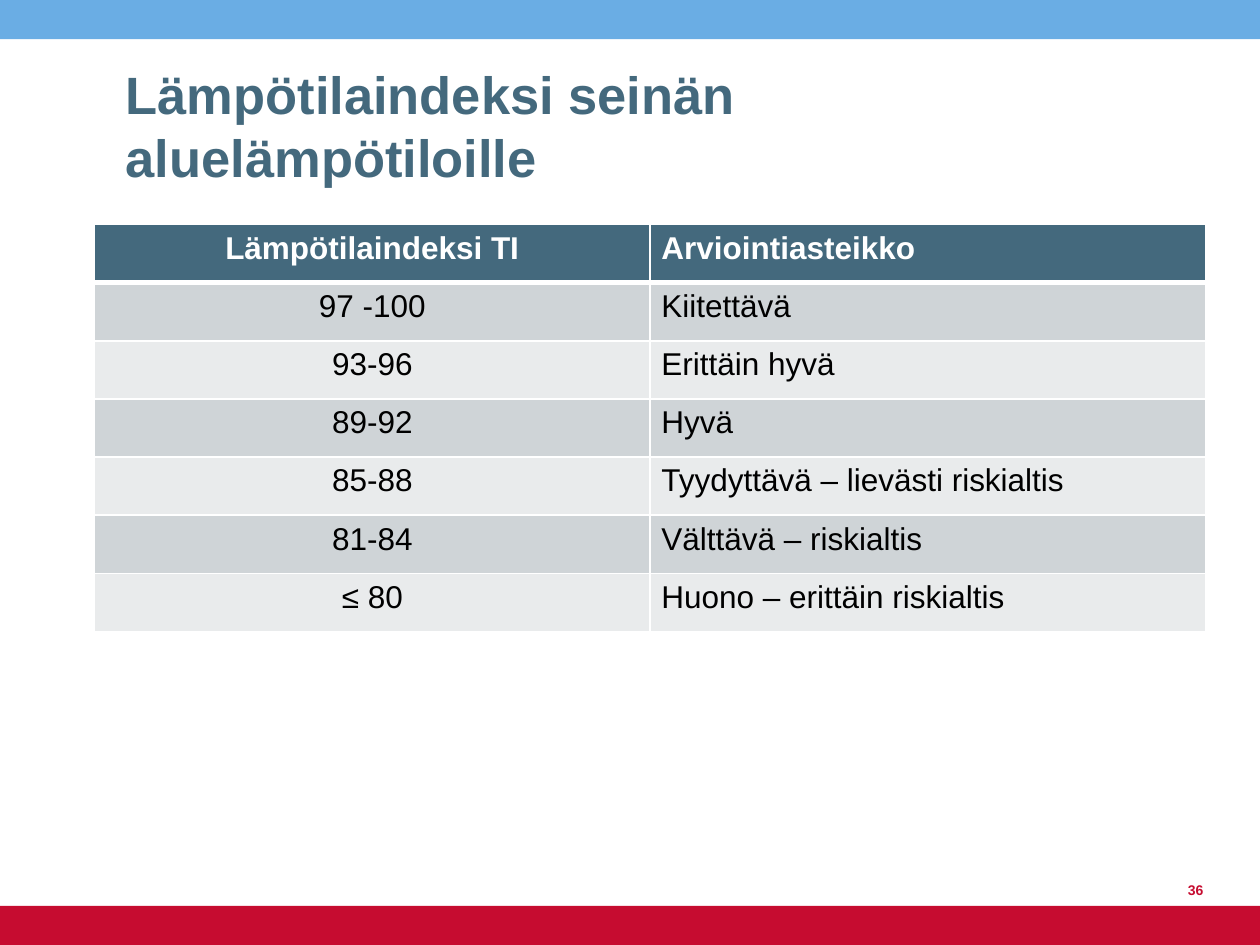
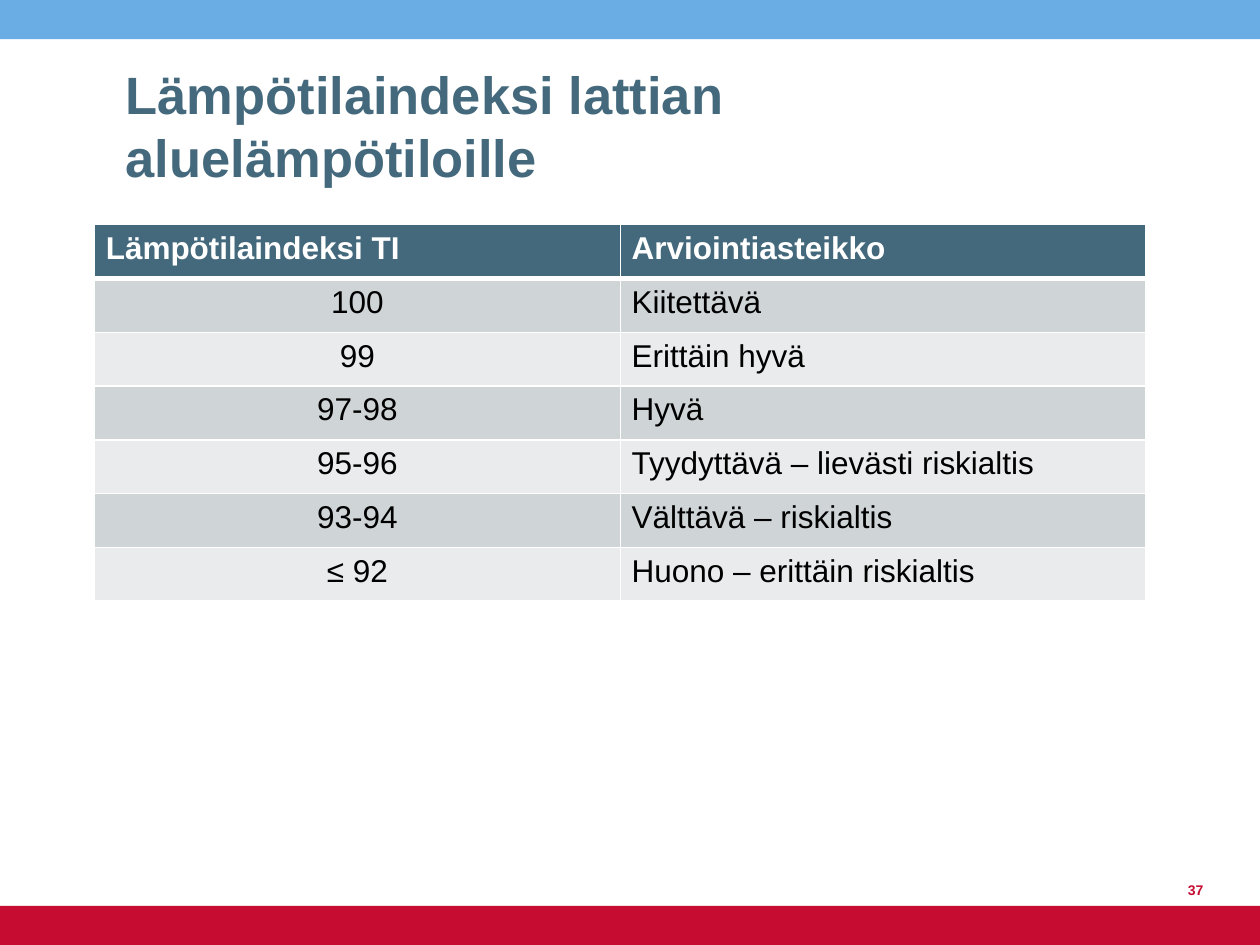
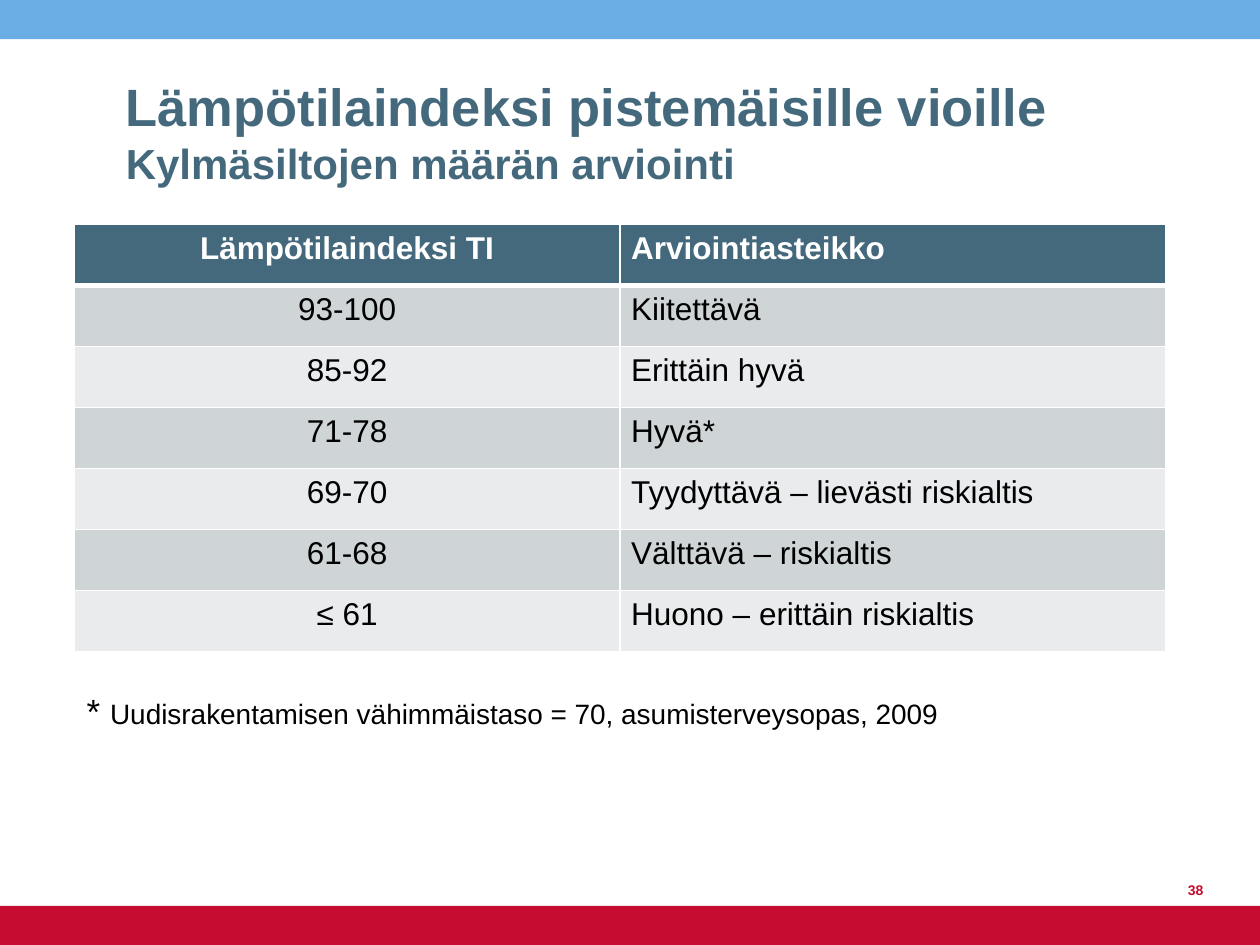
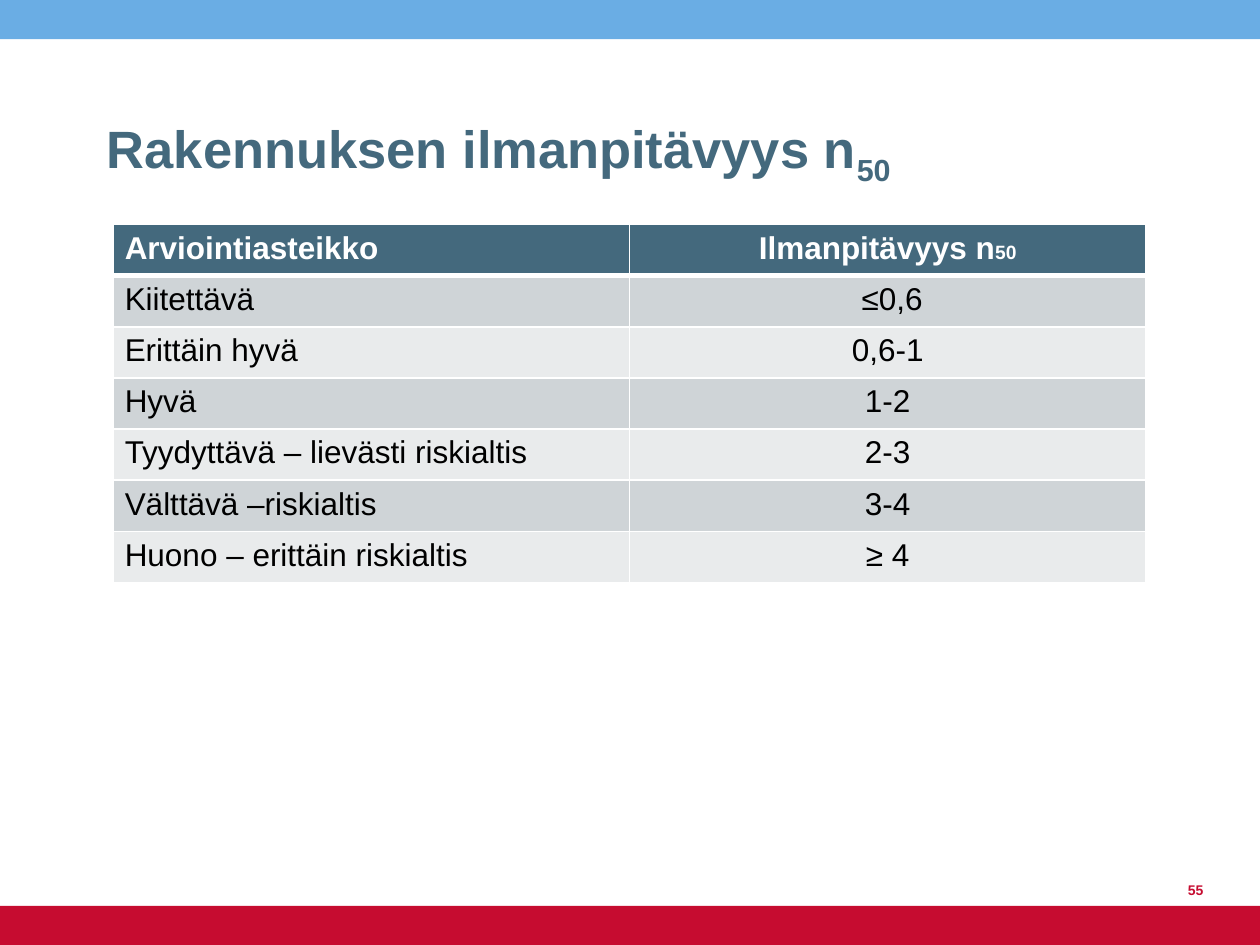
import pptx
import pptx.dml.color
import pptx.enum.shapes
import pptx.enum.text
import pptx.oxml.ns
import pptx.util
from lxml import etree

Pt = pptx.util.Pt
LEFT, CENTER, RIGHT = (getattr(pptx.enum.text.PP_ALIGN, side) for side in ("LEFT", "CENTER", "RIGHT"))

COLORS = {
    "sky": "6AADE4",
    "red": "C60C30",
    "slate": "44697D",
    "row_dark": "CFD4D7",
    "row_light": "E9EBEC",
    "white": "FFFFFF",
    "black": "000000",
}
WIDTH, HEIGHT, BAND = 720, 540, 22.4
TABLE_TOP = 128.4
RATINGS = ["Kiitettävä", "Erittäin hyvä", "Hyvä", "Tyydyttävä – lievästi riskialtis",
           "Välttävä – riskialtis", "Huono – erittäin riskialtis"]


def color(name):
    return pptx.dml.color.RGBColor.from_string(COLORS[name])


class Deck:
    """Holds the shared style and the current slide."""

    font = "Arial"

    def __init__(self):
        self.prs = pptx.Presentation()
        self.prs.slide_width, self.prs.slide_height = Pt(WIDTH), Pt(HEIGHT)
        self.slide = None

    def start(self, number):
        self.slide = self.prs.slides.add_slide(self.prs.slide_layouts[6])
        self.band(0, "sky")
        self.band(HEIGHT - BAND, "red")
        self.text(655.2, 488.2, 39.6, 28.8, [(number, {})], size=8, tint="red",
                  bold=True, align=RIGHT, anchor="BOTTOM")

    def band(self, top, tint):
        bar = self.slide.shapes.add_shape(pptx.enum.shapes.MSO_SHAPE.RECTANGLE,
                                          0, Pt(top), Pt(WIDTH), Pt(BAND))
        bar.shadow.inherit = False
        bar.fill.solid()
        bar.fill.fore_color.rgb = color(tint)
        bar.line.fill.background()

    def fill_paragraph(self, paragraph, runs, size, tint, bold=False, align=LEFT):
        """Each run is (text, changes); a line feed stands for a line break."""
        paragraph.alignment = align
        for text, changes in runs:
            if text == "\n":
                paragraph.add_line_break()
                continue
            run = paragraph.add_run()
            run.text = text
            font_values = {"name": self.font, "size": Pt(changes.get("size", size)), "bold": bold}
            for key, value in font_values.items():
                setattr(run.font, key, value)
            run.font.color.rgb = color(tint)
            if "baseline" in changes:
                run._r.get_or_add_rPr().set("baseline", str(changes["baseline"] * 1000))

    def text(self, left, top, width, height, runs, anchor="TOP", **style):
        frame = self.slide.shapes.add_textbox(Pt(left), Pt(top), Pt(width), Pt(height)).text_frame
        frame.word_wrap = True
        frame.vertical_anchor = getattr(pptx.enum.text.MSO_ANCHOR, anchor)
        self.fill_paragraph(frame.paragraphs[0], runs, **style)

    def title(self, runs, left=64.8):
        self.text(left, 25.9, 589.7, 85, runs, anchor="BOTTOM", size=30, tint="slate", bold=True)

    def borders(self, cell, widths):
        properties = cell._tc.get_or_add_tcPr()
        for side, width in widths.items():
            line = etree.SubElement(properties, pptx.oxml.ns.qn(f"a:ln{side}"), w=str(Pt(width)))
            fill = etree.SubElement(line, pptx.oxml.ns.qn("a:solidFill"))
            etree.SubElement(fill, pptx.oxml.ns.qn("a:srgbClr"), val=COLORS["white"])

    def table(self, left, width, row_height, rows, aligns, header_aligns=None):
        """Header row on slate, then alternating grey rows; a cell is a list of runs or a string."""
        frame = self.slide.shapes.add_table(len(rows), len(aligns), Pt(left), Pt(TABLE_TOP),
                                            Pt(width), Pt(row_height * len(rows)))
        grid = frame.table
        grid.horz_banding = grid.first_row = False
        for column in grid.columns:
            column.width = Pt(width / len(aligns))
        for i, row in enumerate(rows):
            grid.rows[i].height = Pt(row_height)
            header = i == 0
            tint = "slate" if header else ("row_light", "row_dark")[i % 2]
            row_aligns = header_aligns if header and header_aligns else aligns
            for j, content in enumerate(row):
                cell = grid.cell(i, j)
                cell.margin_left = cell.margin_right = Pt(6.5)
                cell.margin_top = cell.margin_bottom = Pt(3.6)
                self.borders(cell, {"L": 1, "R": 1, "T": 3 if i == 1 else 1, "B": 3 if header else 1})
                cell.fill.solid()
                cell.fill.fore_color.rgb = color(tint)
                runs = [(content, {})] if isinstance(content, str) else content
                self.fill_paragraph(cell.text_frame.paragraphs[0], runs, size=18, bold=header,
                                    tint="white" if header else "black", align=row_aligns[j])


def index_rows(indexes, ratings):
    return [("Lämpötilaindeksi TI", "Arviointiasteikko"), *zip(indexes, ratings)]


def main():
    deck = Deck()

    # Wall area temperatures
    deck.start("36")
    deck.title([("Lämpötilaindeksi seinän aluelämpötiloille", {})])
    wall = ["97 -100", "93-96", "89-92", "85-88", "81-84", "≤ 80"]
    deck.table(54, 635, 33.2, index_rows(wall, RATINGS), (CENTER, LEFT))

    # Floor area temperatures
    deck.start("37")
    deck.title([("Lämpötilaindeksi lattian aluelämpötiloille", {})])
    floor = ["100", "99", "97-98", "95-96", "93-94", "≤ 92"]
    deck.table(54, 601, 30.75, index_rows(floor, RATINGS), (CENTER, LEFT), (LEFT, LEFT))

    # Point defects and cold bridges
    deck.start("38")
    deck.title([("Lämpötilaindeksi pistemäisille vioille", {}), ("\n", {}),
                ("Kylmäsiltojen määrän arviointi", {"size": 24})])
    defects = ["93-100", "85-92", "71-78", "69-70", "61-68", "≤ 61"]
    starred = [rating + "*" if rating == "Hyvä" else rating for rating in RATINGS]
    deck.table(42.5, 623.5, 34.85, index_rows(defects, starred), (CENTER, LEFT))
    deck.text(42.5, 390.2, 607, 31.7,
              [("* ", {"size": 20}), ("Uudisrakentamisen vähimmäistaso = 70, asumisterveysopas, 2009", {})],
              size=16, tint="black")

    # Airtightness of the building
    deck.start("55")
    deck.title([("Rakennuksen ilmanpitävyys n", {}), ("50", {"baseline": -25})], left=54)
    airtightness = [" ≤0,6", "0,6-1", "1-2", "2-3", "3-4", "≥ 4"]
    tight_ratings = [rating.replace("– riski", "–riski") for rating in RATINGS]
    header = ("Arviointiasteikko", [("Ilmanpitävyys n", {}), ("50", {"size": 11})])
    deck.table(64.8, 590, 29.2, [header, *zip(tight_ratings, airtightness)], (LEFT, CENTER))

    deck.prs.save("out.pptx")


if __name__ == "__main__":
    main()
